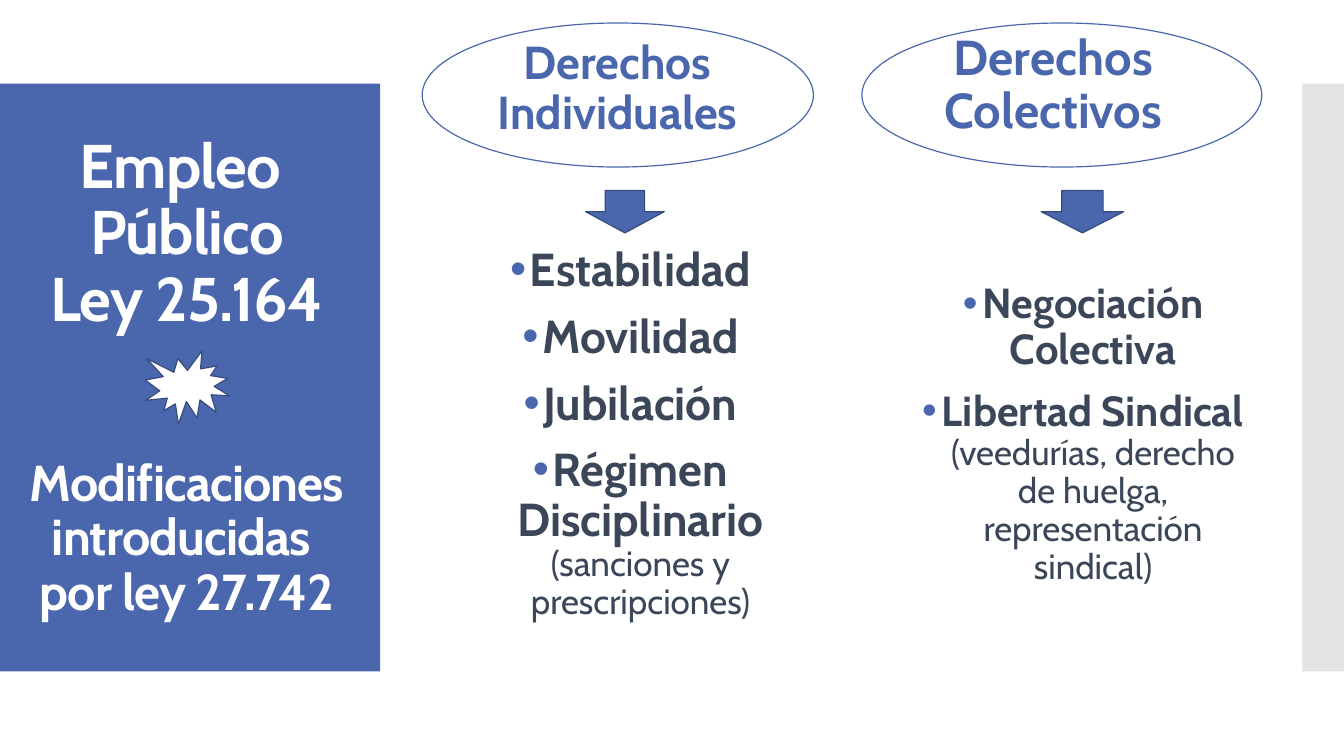
from lxml import etree
from pptx import Presentation
from pptx.dml.color import RGBColor
from pptx.enum.shapes import MSO_SHAPE
from pptx.enum.text import MSO_ANCHOR, MSO_AUTO_SIZE, PP_ALIGN
from pptx.oxml.ns import qn
from pptx.util import Cm, Pt

RECTANGLE = MSO_SHAPE.RECTANGLE
OVAL = MSO_SHAPE.OVAL
DOWN_ARROW = MSO_SHAPE.DOWN_ARROW
BURST = MSO_SHAPE.EXPLOSION1
MIDDLE = MSO_ANCHOR.MIDDLE
BOTTOM = MSO_ANCHOR.BOTTOM
CENTER = PP_ALIGN.CENTER
NO_AUTOFIT = MSO_AUTO_SIZE.NONE

BLUE = RGBColor(0x4A, 0x66, 0xAC)
DARK_BLUE = RGBColor(0x37, 0x4B, 0x7F)
SLATE = RGBColor(0x3B, 0x47, 0x59)
GREY = RGBColor(0xC8, 0xC8, 0xC8)
WHITE = RGBColor(0xFF, 0xFF, 0xFF)

FONT = "Cabin"
COMPARISON_LAYOUT = 4
BAR_TOP, BAR_HEIGHT = 2.11, 14.81
OVAL_TOP, OVAL_HEIGHT = 0.58, 3.63
ARROW_TOP, ARROW_HEIGHT = 4.8, 1.07
LIST_TOP, LIST_HEIGHT = 5.36, 11.18


def add_figure(page, kind, frame, fill, line=None):
    figure = page.shapes.add_shape(kind, *map(Cm, frame))
    figure.shadow.inherit = False
    figure.fill.solid()
    figure.fill.fore_color.rgb = fill
    if line is None:
        figure.line.fill.background()
    else:
        figure.line.color.rgb = line
        figure.line.width = Pt(0.85)
    return figure


def send_behind_text(page, figure):
    page.shapes.title.element.addprevious(figure.element)


def make_half_transparent(figure):
    color = figure.element.spPr.find(qn("a:solidFill"))[0]
    etree.SubElement(color, qn("a:alpha"), val="50000")


def place_box(box, frame, anchor):
    box.left, box.top, box.width, box.height = map(Cm, frame)
    text = box.text_frame
    text.word_wrap = True
    text.auto_size = NO_AUTOFIT
    text.vertical_anchor = anchor
    return text


def next_para(text, is_first, space_before=0):
    para = text.paragraphs[0] if is_first else text.add_paragraph()
    para.alignment = CENTER
    para.line_spacing = 0.9
    para.space_before = Pt(space_before)
    para.space_after = Pt(0)
    return para


def add_span(para, words, size, color, bold=True):
    span = para.add_run()
    span.text = words
    span.font.name = FONT
    span.font.size = Pt(size)
    span.font.bold = bold
    span.font.color.rgb = color
    return span


def set_bullet(para):
    properties = para._p.get_or_add_pPr()
    properties.set("marL", str(Cm(0.5)))
    properties.set("indent", str(-Cm(0.5)))
    bullet_color = etree.SubElement(properties, qn("a:buClr"))
    etree.SubElement(bullet_color, qn("a:srgbClr"), val=str(BLUE))
    etree.SubElement(properties, qn("a:buFont"), typeface="Arial")
    etree.SubElement(properties, qn("a:buChar"), char="•")


def fill_title(box, frame, blocks):
    text = place_box(box, frame, MIDDLE)
    for number, (lines, size, space_before) in enumerate(blocks):
        para = next_para(text, number == 0, space_before)
        for position, line in enumerate(lines):
            if position:
                para.add_line_break()
            span = add_span(para, line, size, WHITE)
            span.font._element.set("spc", "-60")


def fill_heading(box, frame, words, size):
    para = next_para(place_box(box, frame, BOTTOM), True)
    add_span(para, words, size, BLUE)


def fill_list(box, frame, items, size):
    text = place_box(box, frame, MIDDLE)
    for number, (right, detail) in enumerate(items):
        para = next_para(text, number == 0, 12)
        set_bullet(para)
        add_span(para, right, size, SLATE)
        if detail:
            add_span(para, detail, 25, SLATE, bold=False)


def main():
    deck = Presentation()
    deck.slide_width, deck.slide_height = Cm(33.87), Cm(19.05)
    page = deck.slides.add_slide(deck.slide_layouts[COMPARISON_LAYOUT])
    title, left_heading, left_list, right_heading, right_list = page.placeholders

    title_panel = add_figure(page, RECTANGLE, (0, BAR_TOP, 9.58, BAR_HEIGHT), BLUE)
    side_bar = add_figure(page, RECTANGLE, (32.82, BAR_TOP, 1.05, BAR_HEIGHT), GREY)
    make_half_transparent(side_bar)
    ovals = [
        add_figure(page, OVAL, (left, OVAL_TOP, width, OVAL_HEIGHT), WHITE, BLUE)
        for left, width in ((21.72, 10.08), (10.64, 9.86))
    ]
    for figure in (title_panel, side_bar, *ovals):
        send_behind_text(page, figure)

    fill_title(title, (0, 2.16, 9.42, 14.73), [
        (("Empleo ", "Público", "Ley 25.164"), 44, 0),
        (("Modificaciones", "introducidas ", "por ley 27.742"), 36, 88),
    ])
    fill_heading(left_heading, (10.74, 1.02, 9.65, 2.62), "Derechos Individuales", 33)
    fill_list(left_list, (11.38, LIST_TOP, 9.02, LIST_HEIGHT), [
        ("Estabilidad", ""),
        ("Movilidad", ""),
        ("Jubilación", ""),
        ("Régimen Disciplinario ", "(sanciones y prescripciones)"),
    ], 33)
    fill_heading(right_heading, (21.72, 0.76, 9.65, 2.87), "Derechos Colectivos", 35)
    fill_list(right_list, (22.76, LIST_TOP, 9.07, LIST_HEIGHT), [
        ("Negociación Colectiva", ""),
        ("Libertad Sindical ",
         "(veedurías, derecho de huelga, representación sindical)"),
    ], 30)

    for left, width in ((14.76, 1.98), (26.24, 2.08)):
        add_figure(page, DOWN_ARROW, (left, ARROW_TOP, width, ARROW_HEIGHT), BLUE, DARK_BLUE)
    add_figure(page, BURST, (3.66, 8.84, 2.13, 1.85), WHITE, DARK_BLUE)

    deck.save("out.pptx")


if __name__ == "__main__":
    main()
